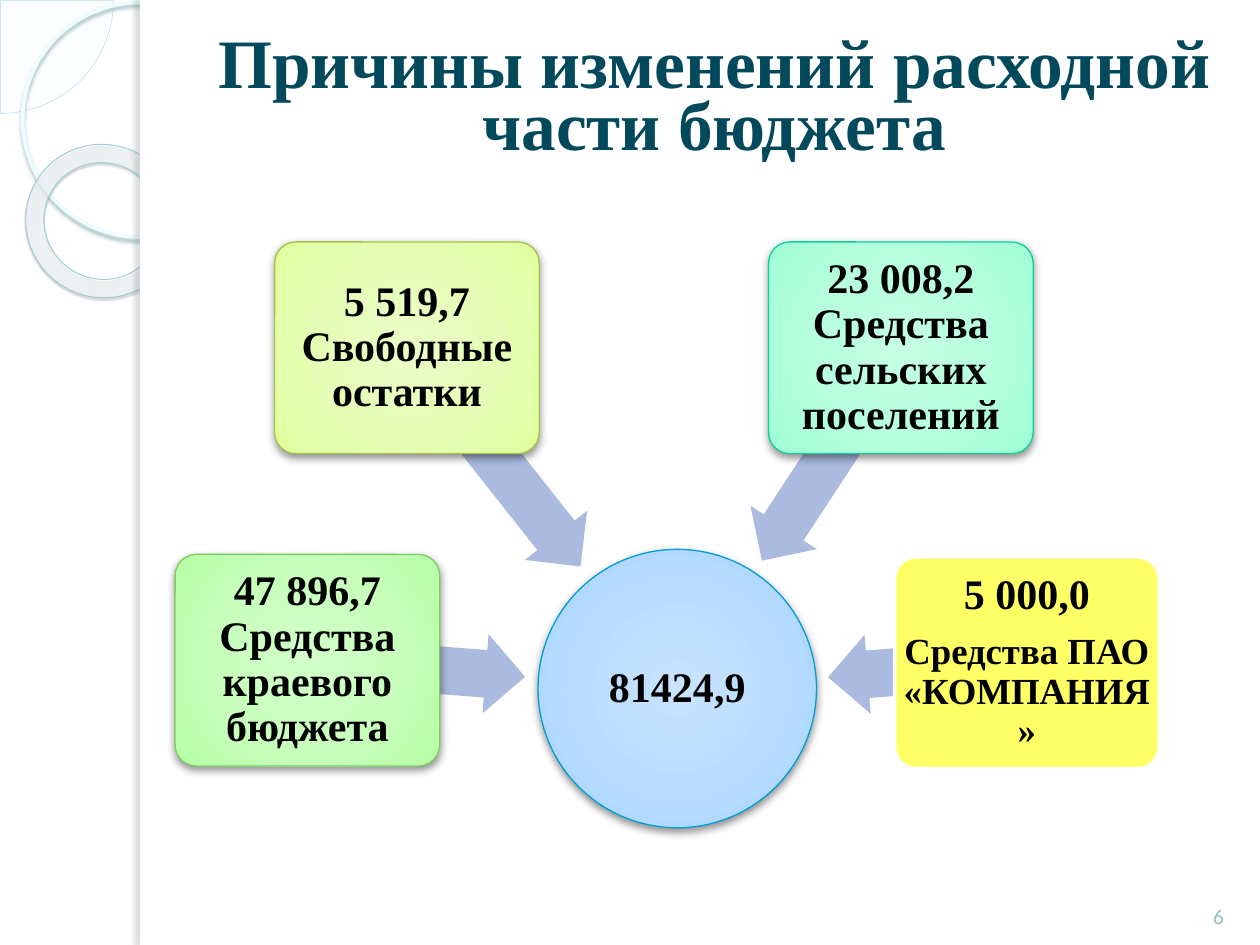
from lxml import etree
from pptx import Presentation
from pptx.dml.color import RGBColor
from pptx.enum.shapes import MSO_SHAPE
from pptx.enum.text import MSO_ANCHOR, PP_ALIGN
from pptx.oxml import parse_xml
from pptx.oxml.ns import nsdecls, qn
from pptx.util import Inches, Pt

CENTER = PP_ALIGN.CENTER
MIDDLE, BOTTOM = MSO_ANCHOR.MIDDLE, MSO_ANCHOR.BOTTOM
ROUNDED, ELLIPSE = MSO_SHAPE.ROUNDED_RECTANGLE, MSO_SHAPE.OVAL
ARROW, RECTANGLE = MSO_SHAPE.LEFT_ARROW, MSO_SHAPE.RECTANGLE
PIE, DONUT = MSO_SHAPE.PIE, MSO_SHAPE.DONUT

SERIF, SANS = "Times New Roman", "Calibri"
COLORS = {
    "title": "03495C", "text": "000000", "number": "97BDC3", "white": "FFFFFF",
    "arrow": "ABBBDF", "yellow": "FFFF66",
    "pie": "F8FEFF", "pie_line": "AFDBE2", "ring": "EDFCFF", "donut_line": "A1CFD6",
    "blue_line": "009DD9", "green_line": "7CCA62",
    "lime_line": "A5C249", "mint_line": "10CF9B",
}
# Radial gradients, from the centre outwards
GRADIENTS = {
    "blue": ("C7E3FF", "BADDFF", "A4D3FF", "9ED0FF"),
    "green": ("D2FFC9", "C8FFBC", "B7FFA7", "B3FFA1"),
    "lime": ("EAFDC6", "E6FDB8", "E0FF9F", "DEFF98"),
    "mint": ("C4FFE4", "B7FFDE", "A0FFD4", "99FFD2"),
}
GRADIENT_POSITIONS = (0, 50, 97, 100)
CARD_SHADOW = ("000000", 43, 5, 2, 90)
CARD_WIDTH, CARD_HEIGHT = 2.1, 1.68
ARROW_HEIGHT = 0.63


def color(name):
    return RGBColor.from_string(COLORS[name])


def add_shape(slide, kind, box, fill=None, line=None, line_width=0.75, adjustments=()):
    shape = slide.shapes.add_shape(kind, *map(Inches, box))
    shape.shadow.inherit = False
    for index, value in enumerate(adjustments):
        shape.adjustments[index] = value
    if fill:
        shape.fill.solid()
        shape.fill.fore_color.rgb = color(fill)
    else:
        shape.fill.background()
    if line:
        shape.line.color.rgb = color(line)
        shape.line.width = Pt(line_width)
    else:
        shape.line.fill.background()
    return shape


def set_radial_fill(shape, stops, focus=(50, 50, 50, 50)):
    """Stops are (position, colour, opacity), all in percent."""
    stop_xml = "".join(
        f'<a:gs pos="{position * 1000}"><a:srgbClr val="{value}">'
        f'<a:alpha val="{opacity * 1000}"/></a:srgbClr></a:gs>'
        for position, value, opacity in stops)
    left, top, right, bottom = (side * 1000 for side in focus)
    gradient = parse_xml(
        f'<a:gradFill {nsdecls("a")} rotWithShape="1"><a:gsLst>{stop_xml}</a:gsLst>'
        f'<a:path path="circle"><a:fillToRect l="{left}" t="{top}" r="{right}" '
        f'b="{bottom}"/></a:path></a:gradFill>')
    properties = shape._element.spPr
    properties.replace(properties.find(qn("a:noFill")), gradient)


def set_shadow(shape, value, opacity, blur, distance, angle):
    effects = shape._element.spPr.find(qn("a:effectLst"))
    shadow = etree.SubElement(
        effects, qn("a:outerShdw"), blurRad=str(Pt(blur)), dist=str(Pt(distance)),
        dir=str(angle * 60000), algn="ctr", rotWithShape="0")
    shadow_color = etree.SubElement(shadow, qn("a:srgbClr"), val=value)
    etree.SubElement(shadow_color, qn("a:alpha"), val=str(opacity * 1000))


def write(shape, lines, font_name, font_color, bold=True, anchor=MIDDLE, margin=0.0):
    """Lines are (text, size) pairs, one paragraph each."""
    frame = shape.text_frame
    frame.word_wrap = True
    frame.vertical_anchor = anchor
    frame.margin_left = frame.margin_right = Inches(margin)
    frame.margin_top = frame.margin_bottom = Inches(margin)
    for index, (text, size) in enumerate(lines):
        paragraph = frame.paragraphs[0] if index == 0 else frame.add_paragraph()
        paragraph.text = text
        paragraph.alignment = CENTER
        paragraph.line_spacing = 0.9
        if index < len(lines) - 1:
            paragraph.space_after = Pt(8)
        font = paragraph.font
        font.name, font.size, font.bold = font_name, Pt(size), bold
        font.color.rgb = color(font_color)


def add_side_decoration(slide, left, top, width, height):
    # Quarter disc in the corner
    pie = add_shape(slide, PIE, (left - 0.89, top - 0.89, 1.79, 1.79), "pie",
                    "pie_line", 0.25, (0, 54.02))
    pie_color = pie._element.spPr.find(qn("a:solidFill"))[0]
    etree.SubElement(pie_color, qn("a:alpha"), val="33000")
    # Rings
    ring = add_shape(slide, ELLIPSE, (left + 0.18, top + 0.02, 1.86, 1.86),
                     line="ring", line_width=2.15)
    set_shadow(ring, "9CB9BE", 85, 2, 2, 90)
    donut = add_shape(slide, DONUT, (left + 0.2, top + 1.15, 1.23, 1.21),
                      line="donut_line", line_width=0.58, adjustments=(0.12,))
    donut.rotation = 38.6
    set_radial_fill(donut, ((0, "F9FEFF", 70), (70, "FDFFFF", 55), (100, "9EF2FF", 60)),
                    (-408, -50, 508, 150))
    set_shadow(donut, "4B5E61", 35, 1, 1.2, 75)
    # White page and its shaded edge
    add_shape(slide, RECTANGLE, (left + width, top, 10 - left - width, height), "white")
    edge = add_shape(slide, RECTANGLE, (left + width, top, 0.08, height), "white")
    set_shadow(edge, "6C7A7C", 25, 3, 3, 180)


def add_title(slide, text, left, top, width, height):
    title = slide.shapes.title
    title.left, title.top, title.width, title.height = map(
        Inches, (left, top, width, height))
    write(title, [(text, 39.6)], SERIF, "title", margin=0.05)
    title.text_frame.paragraphs[0].line_spacing = Pt(35)
    # Keep the title in front of the page background
    slide.shapes._spTree.append(title._element)


def add_node(slide, kind, box, lines, theme, adjustments=()):
    if theme in GRADIENTS:
        node = add_shape(slide, kind, box, None, theme + "_line", 0.75, adjustments)
        set_radial_fill(node, [(position, value, 100) for position, value
                               in zip(GRADIENT_POSITIONS, GRADIENTS[theme])])
        set_shadow(node, *CARD_SHADOW)
    else:
        node = add_shape(slide, kind, box, theme, "white", 2, adjustments)
    write(node, lines, SERIF, "text")


def add_diagram(slide, left, top):
    # Total in the centre
    add_node(slide, ELLIPSE, (left + 2.88, top + 2.44, 2.21, 2.21),
             [("81424,9", 24)], "blue")
    # Sources: card offset, text, theme, then arrow offset, length and rotation
    sources = [
        ((0, 2.48), [("47 896,7 Средства краевого бюджета", 24)], "green",
         (1.05, 3.07), 1.73, 184.4),
        ((0.79, 0), [("5 519,7 Свободные остатки", 24)], "lime",
         (1.42, 1.39), 2.22, 231.7),
        ((4.71, 0), [("23 008,2 Средства сельских поселений", 24)], "mint",
         (4.2, 1.37), 2.02, 303.2),
        ((5.71, 2.5), [("5 000,0", 24), ("Средства ПАО «КОМПАНИЯ»", 21)], "yellow",
         (5.18, 3.08), 1.58, 355.6),
    ]
    for card, lines, theme, arrow_offset, length, rotation in sources:
        arrow = add_shape(
            slide, ARROW,
            (left + arrow_offset[0], top + arrow_offset[1], length, ARROW_HEIGHT),
            "arrow", adjustments=(0.6, 0.5))
        arrow.rotation = rotation
        add_node(slide, ROUNDED,
                 (left + card[0], top + card[1], CARD_WIDTH, CARD_HEIGHT),
                 lines, theme, (0.1,))


def add_page_number(slide, number, left, top, width, height):
    box = slide.shapes.add_textbox(*map(Inches, (left, top, width, height)))
    write(box, [(number, 12)], SANS, "number", bold=False, anchor=BOTTOM, margin=0.05)


def main():
    presentation = Presentation()
    presentation.slide_width, presentation.slide_height = Inches(10), Inches(7.5)
    slide = presentation.slides.add_slide(presentation.slide_layouts[5])
    add_side_decoration(slide, 0, 0, 1.11, 7.5)
    add_title(slide, "Причины изменений расходной части бюджета", 1.57, 0.3, 8.2, 1.03)
    add_diagram(slide, 1.39, 1.92)
    add_page_number(slide, "6", 9.42, 6.9, 0.5, 0.52)
    presentation.save("out.pptx")


if __name__ == "__main__":
    main()
